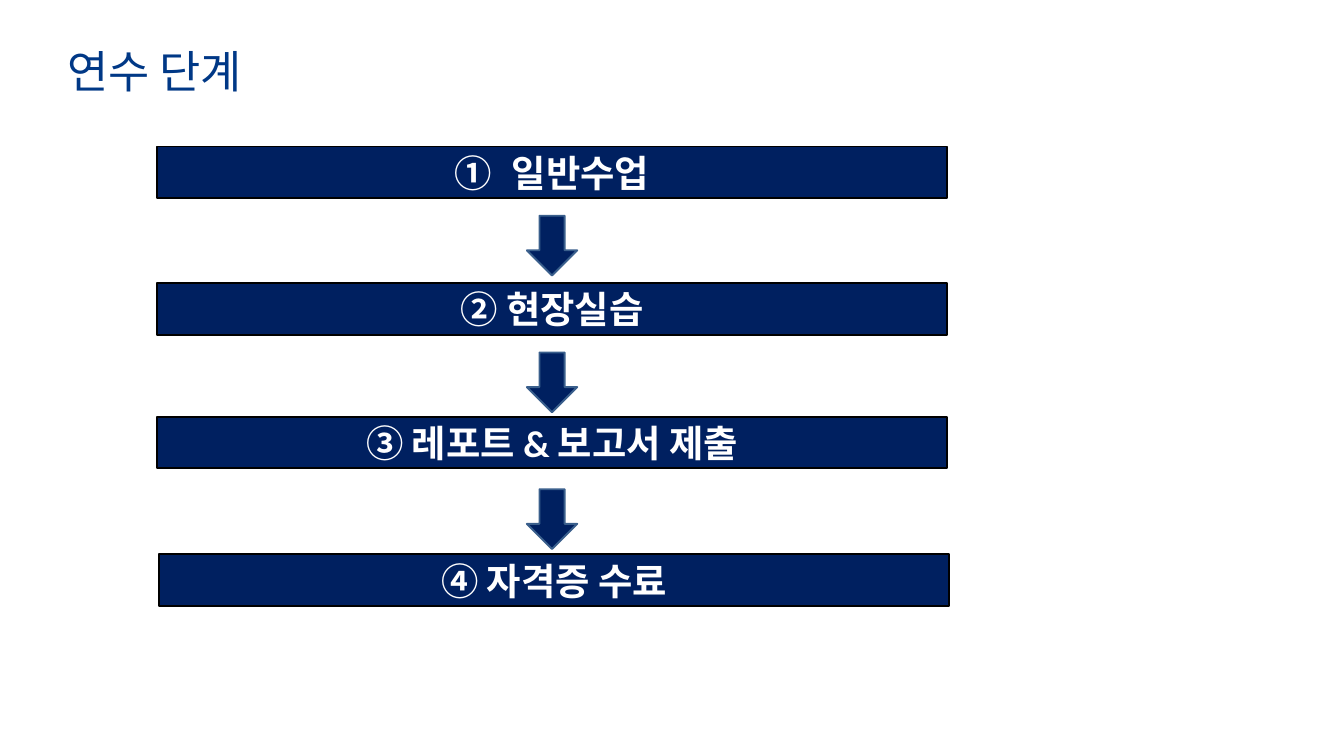
from dataclasses import dataclass

from lxml import etree
from pptx import Presentation
from pptx.dml.color import RGBColor
from pptx.enum import shapes, text
from pptx.oxml import ns
from pptx.util import Inches, Pt


@dataclass(frozen=True)
class Theme:
    """Colours, fonts and sizes of the slide."""
    title: str = "003886"
    navy: str = "002060"
    edge: str = "000000"
    arrow_edge: str = "3A5F8C"
    white: str = "FFFFFF"
    latin: str = "Calibri"
    korean: str = "Noto Sans CJK KR"
    title_size: int = 48
    step_size: int = 40
    line_width: int = 2


@dataclass(frozen=True)
class Step:
    """One bar of the training sequence."""
    label: str
    left: float
    top: float
    numbered: bool = False


THEME = Theme()
STEPS = (
    Step("일반수업", 2.34, 2.18, numbered=True),
    Step("② 현장실습", 2.34, 4.21),
    Step("③ 레포트 & 보고서 제출", 2.34, 6.2),
    Step("④ 자격증 수료", 2.37, 8.25),
)
BAR_WIDTH, BAR_HEIGHT = 11.75, 0.77
ARROW_LEFT, ARROW_TOP, ARROW_PITCH = 7.84, 3.21, 2.035
ARROW_WIDTH, ARROW_HEIGHT = 0.75, 0.89
NUMBER_INDENT = 0.85


def write(box, label: str, size: int, colour: str, latin: str, bold: bool = False) -> None:
    """Put one formatted line of text in a box."""
    frame = box.text_frame
    frame.text = label
    frame.vertical_anchor = text.MSO_ANCHOR.MIDDLE
    span = frame.paragraphs[0].runs[0]
    span.font.name = latin
    span.font.size = Pt(size)
    span.font.bold = bold
    span.font.color.rgb = RGBColor.from_string(colour)
    korean = etree.SubElement(span.font._element, ns.qn("a:ea"))
    korean.set("typeface", THEME.korean)


def add_block(page, kind, left: float, top: float, width: float, height: float, edge: str):
    """Draw a navy shape with a coloured outline."""
    block = page.shapes.add_shape(kind, Inches(left), Inches(top), Inches(width), Inches(height))
    block.shadow.inherit = False
    block.fill.solid()
    block.fill.fore_color.rgb = RGBColor.from_string(THEME.navy)
    block.line.color.rgb = RGBColor.from_string(edge)
    block.line.width = Pt(THEME.line_width)
    return block


def number_paragraph(para) -> None:
    """Give a paragraph a circled automatic number."""
    properties = para._p.get_or_add_pPr()
    properties.set("marL", str(Inches(NUMBER_INDENT)))
    properties.set("indent", str(-Inches(NUMBER_INDENT)))
    etree.SubElement(properties, ns.qn("a:buFont")).set("typeface", THEME.korean)
    etree.SubElement(properties, ns.qn("a:buAutoNum")).set("type", "circleNumDbPlain")


def add_title(page, label: str) -> None:
    """Write the slide title."""
    box = page.shapes.add_textbox(Inches(1), Inches(0.65), Inches(9.98), Inches(0.81))
    frame = box.text_frame
    frame.word_wrap = True
    frame.margin_left = frame.margin_right = frame.margin_top = frame.margin_bottom = 0
    write(box, label, THEME.title_size, THEME.title, THEME.korean)


def add_step(page, step: Step) -> None:
    """Draw one labelled bar."""
    bar = add_block(page, shapes.MSO_SHAPE.RECTANGLE, step.left, step.top,
                    BAR_WIDTH, BAR_HEIGHT, THEME.edge)
    write(bar, step.label, THEME.step_size, THEME.white, THEME.latin, bold=True)
    para = bar.text_frame.paragraphs[0]
    para.alignment = text.PP_ALIGN.CENTER
    if step.numbered:
        number_paragraph(para)


def main() -> None:
    """Build and save the slide."""
    deck = Presentation()
    deck.slide_width, deck.slide_height = Inches(20), Inches(11.25)
    page = deck.slides.add_slide(deck.slide_layouts[6])
    add_title(page, "연수 단계")
    for step in STEPS:
        add_step(page, step)
    for index in range(len(STEPS) - 1):
        add_block(page, shapes.MSO_SHAPE.DOWN_ARROW, ARROW_LEFT,
                  ARROW_TOP + index * ARROW_PITCH, ARROW_WIDTH, ARROW_HEIGHT, THEME.arrow_edge)
    deck.save("out.pptx")


if __name__ == "__main__":
    main()
